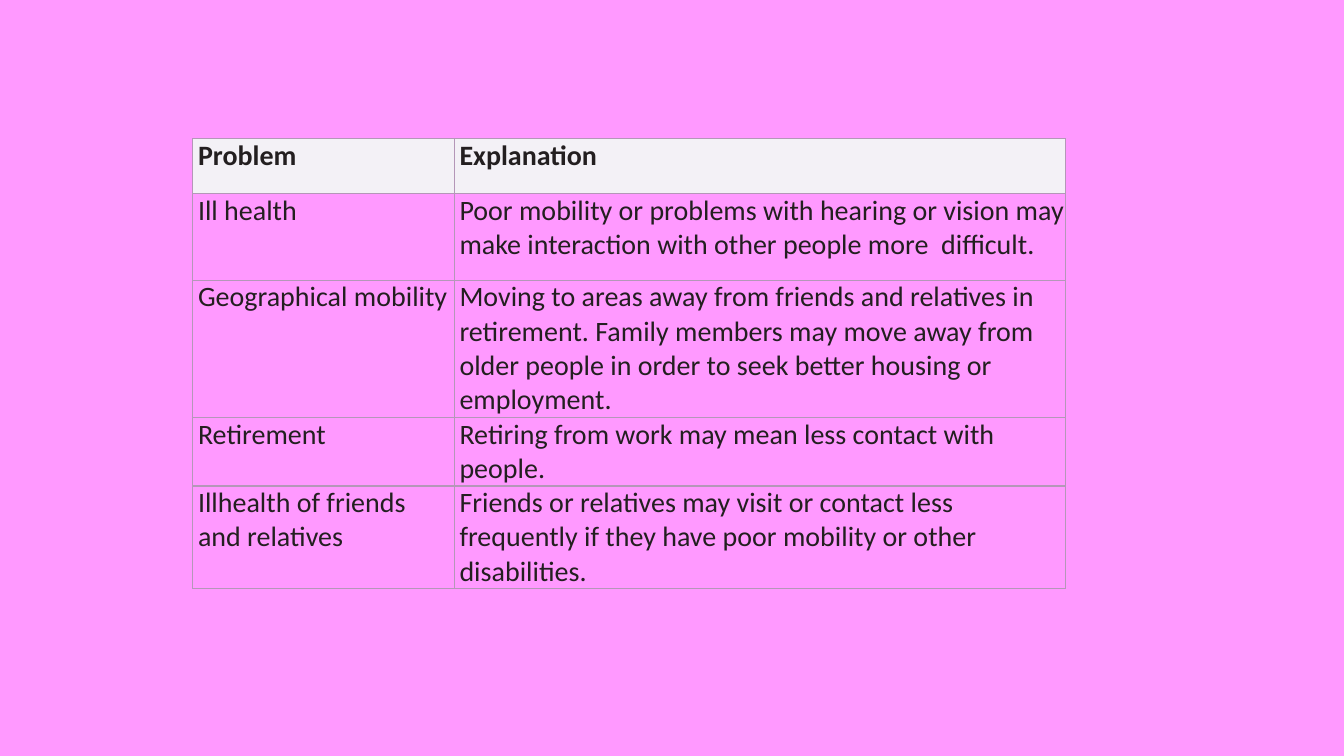
from dataclasses import dataclass

from lxml import etree
from pptx import Presentation
from pptx.dml.color import RGBColor
from pptx.oxml import ns
from pptx.util import Cm, Pt


@dataclass(frozen=True)
class Theme:
    font: str = "Calibri"
    size: float = 20
    ink: str = "231F20"
    background: str = "FF99FF"
    header: str = "F3F1F6"
    border: str = "B497B8"
    border_width: float = 1
    indent: float = 0.13
    space_before: float = 3.7


class SlideBuilder:
    def __init__(self, prs, theme):
        self.theme = theme
        self.slide = prs.slides.add_slide(prs.slide_layouts[6])
        self.paint(self.slide.background.fill, theme.background)

    def paint(self, fill, color):
        fill.solid()
        fill.fore_color.rgb = RGBColor.from_string(color)

    def border(self, cell):
        """Draw all four sides; the schema wants them ahead of the fill."""
        tc_pr = cell._tc.get_or_add_tcPr()
        for i, side in enumerate(("lnL", "lnR", "lnT", "lnB")):
            ln = etree.Element(ns.qn(f"a:{side}"), w=str(Pt(self.theme.border_width)))
            solid = etree.SubElement(ln, ns.qn("a:solidFill"))
            etree.SubElement(solid, ns.qn("a:srgbClr"), val=self.theme.border)
            tc_pr.insert(i, ln)

    def cell(self, cell, content, header):
        theme = self.theme
        cell.margin_left = cell.margin_right = cell.margin_top = cell.margin_bottom = 0
        if header:
            self.paint(cell.fill, theme.header)
        else:
            cell.fill.background()
        self.border(cell)
        p = cell.text_frame.paragraphs[0]
        p.text = content
        p.space_before = Pt(theme.space_before)
        p._p.get_or_add_pPr().set("marL", str(Cm(theme.indent)))
        p.font.name = theme.font
        p.font.size = Pt(theme.size)
        p.font.bold = header
        p.font.color.rgb = RGBColor.from_string(theme.ink)

    def table(self, left, top, widths, heights, rows):
        """Add a table with a header row; all lengths are in centimetres."""
        table = self.slide.shapes.add_table(
            len(rows), len(widths), Cm(left), Cm(top), Cm(sum(widths)), Cm(sum(heights))
        ).table
        table.horz_banding = False
        for column, width in zip(table.columns, widths):
            column.width = Cm(width)
        for i, (row, height, contents) in enumerate(zip(table.rows, heights, rows)):
            row.height = Cm(height)
            for cell, content in zip(row.cells, contents):
                self.cell(cell, content, header=i == 0)


PROBLEMS = [
    ("Problem", "Explanation"),
    ("Ill health",
     "Poor mobility or problems with hearing or vision may make interaction "
     "with other people more  difficult."),
    ("Geographical mobility",
     "Moving to areas away from friends and relatives in retirement. Family members "
     "may move away from older people in order to seek better housing or employment."),
    ("Retirement", "Retiring from work may mean less contact with  people."),
    ("Illhealth of friends and relatives",
     "Friends or relatives may visit or contact less frequently if they have "
     "poor mobility or other  disabilities."),
]


def main():
    prs = Presentation()
    prs.slide_width, prs.slide_height = Cm(33.87), Cm(19.05)
    builder = SlideBuilder(prs, Theme())
    builder.table(4.86, 3.5, widths=(6.59, 15.4),
                  heights=(1.38, 2.18, 2.97, 1.38, 2.18), rows=PROBLEMS)
    prs.save("out.pptx")


if __name__ == "__main__":
    main()
